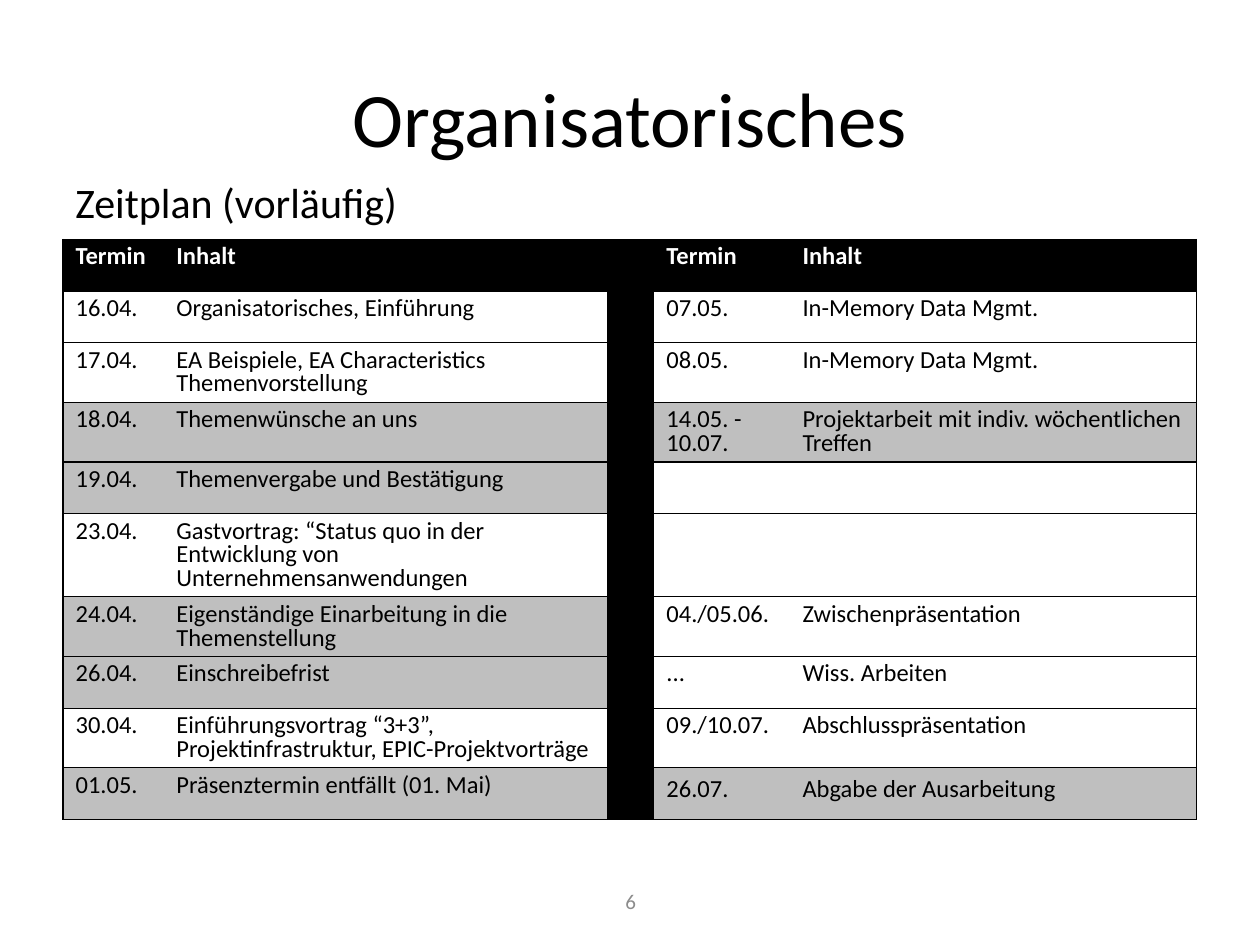
from dataclasses import dataclass

from lxml import etree
from pptx import Presentation
from pptx import util as u
from pptx.dml.color import RGBColor
from pptx.enum import text
from pptx.oxml import ns

Inches = u.Inches


@dataclass(frozen=True)
class Theme:
    font: str = "Calibri"
    ink: str = "000000"
    paper: str = "FFFFFF"
    shade: str = "BFBFBF"
    muted: str = "8C8C8C"
    title_size: int = 44
    heading_size: int = 24
    table_size: int = 14
    number_size: int = 12
    rule: float = 0.75


THEME = Theme()

COLUMN_WIDTHS = [0.8, 3.52, 0.37, 1.08, 3.23]
GAP_COLUMN = 2
ROW_HEIGHT = 0.41
HEADER = ("Termin", "Inhalt", False)
LEFT_DATES = [
    ("16.04.", "Organisatorisches, Einführung", False),
    ("17.04.", "EA Beispiele, EA Characteristics Themenvorstellung", False),
    ("18.04.", "Themenwünsche an uns", True),
    ("19.04.", "Themenvergabe und Bestätigung", True),
    ("23.04.", "Gastvortrag: “Status quo in der Entwicklung von Unternehmensanwendungen", False),
    ("24.04.", "Eigenständige Einarbeitung in die Themenstellung", True),
    ("26.04.", "Einschreibefrist", True),
    ("30.04.", "Einführungsvortrag “3+3”, Projektinfrastruktur, EPIC-Projektvorträge", False),
    ("01.05.", "Präsenztermin entfällt (01. Mai)", True),
]
RIGHT_DATES = [
    ("07.05.", "In-Memory Data Mgmt.", False),
    ("08.05.", "In-Memory Data Mgmt.", False),
    ("14.05. - 10.07.", "Projektarbeit mit indiv. wöchentlichen Treffen", True),
    ("", "", False),
    ("", "", False),
    ("04./05.06.", "Zwischenpräsentation", False),
    ("...", "Wiss. Arbeiten", False),
    ("09./10.07.", "Abschlusspräsentation", False),
    ("26.07.", "Abgabe der Ausarbeitung", True),
]


def style_para(para, size, color, bold=False):
    para.font.name = THEME.font
    para.font.size = u.Pt(size)
    para.font.bold = bold
    para.font.color.rgb = RGBColor.from_string(color)


def place(shape, box):
    shape.left, shape.top, shape.width, shape.height = map(Inches, box)


def add_title(page, box, words):
    title = page.shapes.title
    place(title, box)
    frame = title.text_frame
    frame.text = words
    frame.vertical_anchor = text.MSO_ANCHOR.MIDDLE
    para = frame.paragraphs[0]
    para.alignment = text.PP_ALIGN.CENTER
    style_para(para, THEME.title_size, THEME.ink)


def add_text(page, box, words, size, color):
    frame = page.shapes.add_textbox(*map(Inches, box)).text_frame
    frame.word_wrap = True
    frame.text = words
    para = frame.paragraphs[0]
    style_para(para, size, color)
    return frame, para


def add_heading(page, box, words):
    frame, para = add_text(page, box, words, THEME.heading_size, THEME.ink)
    para.line_spacing = 1.05
    para.space_before = u.Pt(THEME.heading_size * 0.2)


def add_page_number(page, box, number):
    frame, para = add_text(page, box, number, THEME.number_size, THEME.muted)
    frame.vertical_anchor = text.MSO_ANCHOR.MIDDLE
    para.alignment = text.PP_ALIGN.CENTER


def set_borders(cell, ruled_sides):
    properties = cell._tc.get_or_add_tcPr()
    for position, side in enumerate("LRTB"):
        line = etree.Element(ns.qn(f"a:ln{side}"), w=str(u.Pt(THEME.rule)))
        if side in ruled_sides:
            fill = etree.SubElement(line, ns.qn("a:solidFill"))
            etree.SubElement(fill, ns.qn("a:srgbClr"), val=THEME.ink)
        else:
            etree.SubElement(line, ns.qn("a:noFill"))
        properties.insert(position, line)


def fill_cell(cell, words, fill, color, bold, spacing):
    cell.fill.solid()
    cell.fill.fore_color.rgb = RGBColor.from_string(fill)
    cell.text = words
    para = cell.text_frame.paragraphs[0]
    para.line_spacing = spacing
    style_para(para, THEME.table_size, color, bold)


def add_schedule(page, box):
    rows = [(HEADER, HEADER), *zip(LEFT_DATES, RIGHT_DATES)]
    last_row, last_column = len(rows) - 1, len(COLUMN_WIDTHS) - 1
    table = page.shapes.add_table(len(rows), len(COLUMN_WIDTHS), *map(Inches, box)).table
    for column, width in zip(table.columns, COLUMN_WIDTHS):
        column.width = Inches(width)
    for row_index, (left, right) in enumerate(rows):
        table.rows[row_index].height = Inches(ROW_HEIGHT)
        is_header = row_index == 0
        entries = [(left[0], left[2]), (left[1], left[2]), ("", False),
                   (right[0], right[2]), (right[1], right[2])]
        for column_index, (words, shaded) in enumerate(entries):
            cell = table.cell(row_index, column_index)
            if is_header or column_index == GAP_COLUMN:
                fill = THEME.ink
            else:
                fill = THEME.shade if shaded else THEME.paper
            closing = row_index == last_row and column_index > GAP_COLUMN
            fill_cell(cell, words, fill, THEME.paper if is_header else THEME.ink,
                      is_header, 1.0 if closing else 0.8)
            edges = {0: "L", last_column: "R"}
            set_borders(cell, "TB" + edges.get(column_index, ""))


def main():
    deck = Presentation()
    deck.slide_width, deck.slide_height = Inches(10), Inches(7.5)
    page = deck.slides.add_slide(deck.slide_layouts[5])
    add_title(page, (0.5, 0.3, 9, 1.25), "Organisatorisches")
    add_heading(page, (0.5, 1.33, 9, 4.95), "Zeitplan (vorläufig)")
    add_page_number(page, (3.42, 6.95, 3.17, 0.4), "6")
    add_schedule(page, (0.5, 1.9, 9, 4.1))
    deck.save("out.pptx")


if __name__ == "__main__":
    main()
